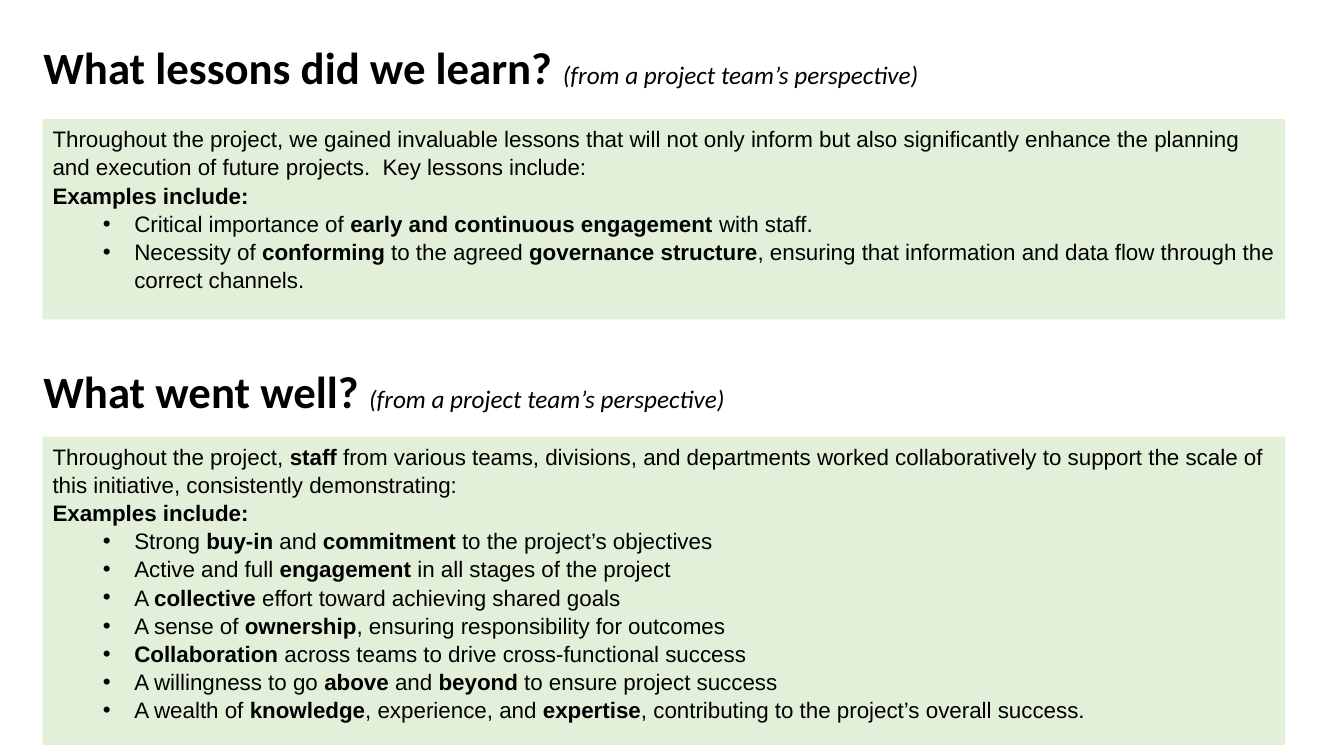
from dataclasses import dataclass

from lxml.etree import SubElement
from pptx import Presentation
from pptx.dml.color import RGBColor
from pptx.enum.text import MSO_ANCHOR, MSO_AUTO_SIZE, PP_ALIGN
from pptx.oxml.ns import qn
from pptx.util import Cm, Pt

PERSPECTIVE = "(from a project team’s perspective)"
EXAMPLES = "**Examples include:**"

# Text between double asterisks is bold.
SECTIONS = [
    {
        "heading": "What lessons did we learn? ",
        "intro": "Throughout the project, we gained invaluable lessons that will not only "
                 "inform but also significantly enhance the planning and execution of "
                 "future projects.  Key lessons include:",
        "bullets": [
            "Critical importance of **early and continuous engagement **with staff.",
            "Necessity of **conforming** to the agreed **governance structure**, ensuring "
            "that information and data flow through the correct channels.",
        ],
        "heading_top": 0.86, "panel_top": 3.0, "panel_height": 5.05,
        "placeholders": (0, 2),
    },
    {
        "heading": "What went well? ",
        "intro": "Throughout the project, **staff** from various teams, divisions, and "
                 "departments worked collaboratively to support the scale of this "
                 "initiative, consistently demonstrating:",
        "bullets": [
            "Strong **buy-in** and** commitment **to the project’s objectives",
            "Active and full **engagement **in all stages of the project",
            "A **collective** effort toward achieving shared goals",
            "A sense of **ownership**, ensuring responsibility for outcomes",
            "**Collaboration **across teams to drive cross-functional success",
            "A willingness to go **above** and **beyond** to ensure project success",
            "A wealth of **knowledge**, experience, and **expertise**, contributing to "
            "the project’s overall success.",
        ],
        "heading_top": 9.02, "panel_top": 11.0, "panel_height": 7.77,
        "placeholders": (3, 4),
    },
]


@dataclass(frozen=True)
class Theme:
    ink: RGBColor = RGBColor(0, 0, 0)
    panel: RGBColor = RGBColor(0xE2, 0xF0, 0xD9)
    heading_font: str = "Calibri"
    body_font: str = "Arial"
    heading_size: int = 32
    aside_size: int = 18
    body_size: int = 16
    line_spacing: float = 1.05


THEME = Theme()
HEADING_LEFT, HEADING_WIDTH, HEADING_HEIGHT = Cm(0.84), Cm(29.92), Cm(1.63)
PANEL_LEFT, PANEL_WIDTH = Cm(1.07), Cm(31.32)
BULLET_MARGIN, BULLET_INDENT = Cm(2.06), Cm(-0.79)


def place(shape, left, top, width, height, anchor):
    shape.left, shape.top, shape.width, shape.height = left, top, width, height
    text_frame = shape.text_frame
    text_frame.word_wrap = True
    text_frame.auto_size = MSO_AUTO_SIZE.NONE
    text_frame.vertical_anchor = anchor


def add_run(paragraph, text, font_name, size, bold=False, italic=False):
    run = paragraph.add_run()
    run.text = text
    run.font.name, run.font.size = font_name, Pt(size)
    run.font.bold, run.font.italic = bold, italic
    run.font.color.rgb = THEME.ink


def set_bullet(paragraph, bulleted):
    properties = paragraph._p.get_or_add_pPr()
    properties.set("marL", str(BULLET_MARGIN if bulleted else 0))
    properties.set("indent", str(BULLET_INDENT if bulleted else 0))
    if bulleted:
        paragraph.level = 1
        SubElement(properties, qn("a:buFont")).set("typeface", THEME.body_font)
        SubElement(properties, qn("a:buChar")).set("char", "•")
    else:
        SubElement(properties, qn("a:buNone"))


def fill_heading(shape, section):
    place(shape, HEADING_LEFT, Cm(section["heading_top"]), HEADING_WIDTH,
          HEADING_HEIGHT, MSO_ANCHOR.MIDDLE)
    paragraph = shape.text_frame.paragraphs[0]
    paragraph.alignment = PP_ALIGN.LEFT
    paragraph.space_before = Pt(0)
    add_run(paragraph, section["heading"], THEME.heading_font, THEME.heading_size, bold=True)
    add_run(paragraph, PERSPECTIVE, THEME.heading_font, THEME.aside_size, italic=True)


def fill_panel(shape, section):
    place(shape, PANEL_LEFT, Cm(section["panel_top"]), PANEL_WIDTH,
          Cm(section["panel_height"]), MSO_ANCHOR.TOP)
    shape.fill.solid()
    shape.fill.fore_color.rgb = THEME.panel
    lines = [(section["intro"], False), (EXAMPLES, False)]
    lines += [(bullet, True) for bullet in section["bullets"]]
    text_frame = shape.text_frame
    for index, (line, bulleted) in enumerate(lines):
        paragraph = text_frame.add_paragraph() if index else text_frame.paragraphs[0]
        paragraph.alignment = PP_ALIGN.LEFT
        paragraph.line_spacing = THEME.line_spacing
        paragraph.space_before = paragraph.space_after = Pt(0)
        set_bullet(paragraph, bulleted)
        for position, part in enumerate(line.split("**")):
            if part:
                add_run(paragraph, part, THEME.body_font, THEME.body_size,
                        bold=position % 2 == 1)


def main():
    presentation = Presentation()
    presentation.slide_width, presentation.slide_height = Cm(33.87), Cm(19.05)
    comparison_layout = presentation.slide_layouts[4]
    slide = presentation.slides.add_slide(comparison_layout)
    placeholders = {shape.placeholder_format.idx: shape for shape in slide.placeholders}
    for section in SECTIONS:
        heading_index, panel_index = section["placeholders"]
        fill_heading(placeholders.pop(heading_index), section)
        fill_panel(placeholders.pop(panel_index), section)
    for unused in placeholders.values():
        unused.element.getparent().remove(unused.element)
    presentation.save("out.pptx")


if __name__ == "__main__":
    main()
